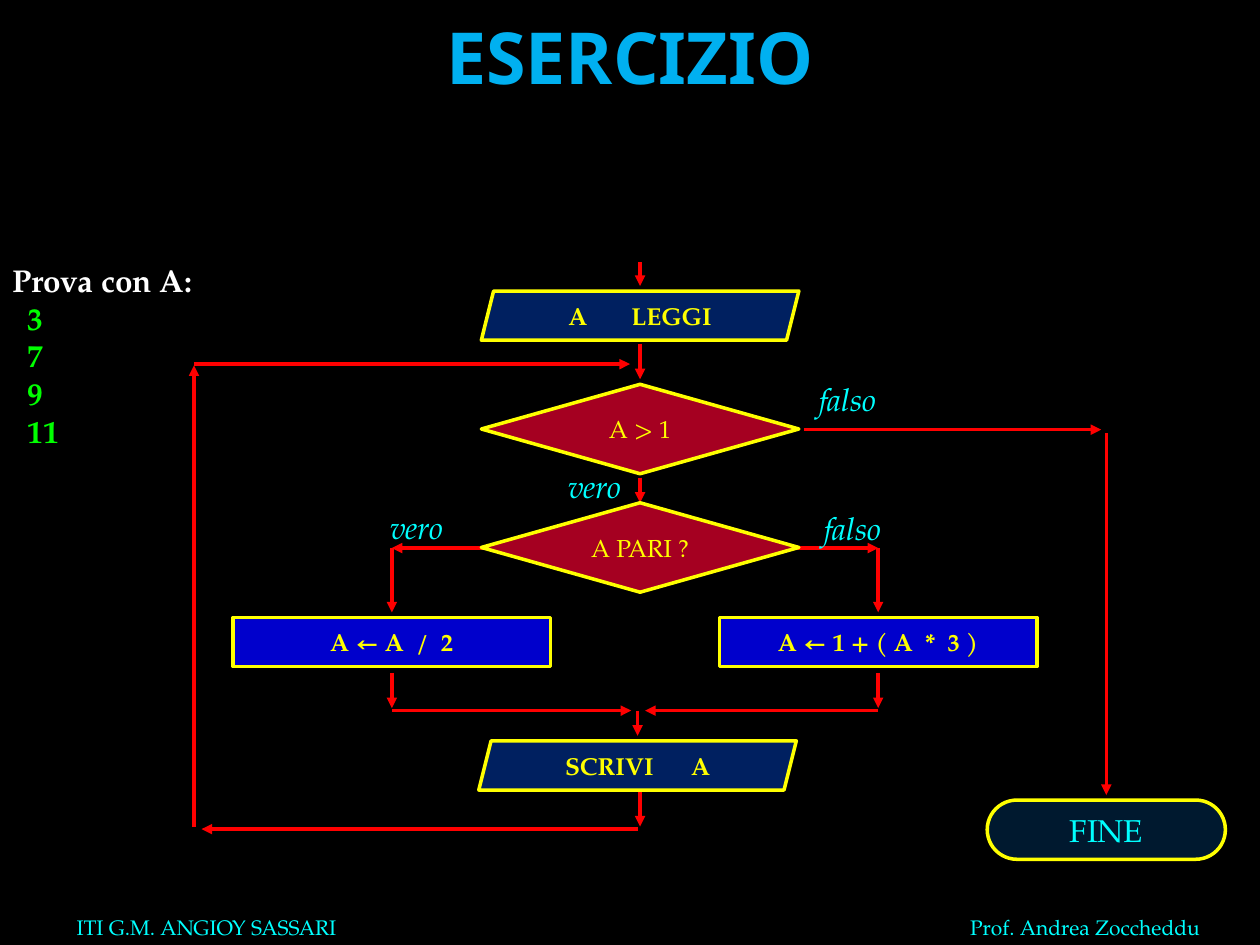
from lxml import etree
from pptx import Presentation
from pptx.dml.color import RGBColor
from pptx.enum.shapes import MSO_CONNECTOR, MSO_SHAPE
from pptx.enum.text import MSO_ANCHOR, PP_ALIGN
from pptx.oxml.ns import qn
from pptx.util import Inches, Pt

LEFT, CENTER = PP_ALIGN.LEFT, PP_ALIGN.CENTER
TOP, MIDDLE = MSO_ANCHOR.TOP, MSO_ANCHOR.MIDDLE
STRAIGHT = MSO_CONNECTOR.STRAIGHT
DATA, TEST = MSO_SHAPE.PARALLELOGRAM, MSO_SHAPE.DIAMOND
STEP, END = MSO_SHAPE.FLOWCHART_PROCESS, MSO_SHAPE.ROUNDED_RECTANGLE

THEME = dict(
    title_font="Noto Sans", font="TeX Gyre Pagella",
    bg="000000", title="00B0F0", cyan="00FFFF", yellow="FFFF00",
    arrow="FF0000", white="FFFFFF", green="00FF00",
    title_size=41, big=18, block=14, small=12, line=2)

# Size, fill, text colour, text size and weight of each kind of block
KINDS = {
    DATA: (2.52, 0.39, "002060", "yellow", "block", True),
    TEST: (2.52, 0.71, "A50021", "yellow", "block", False),
    STEP: (2.52, 0.39, "0000CC", "yellow", "block", True),
    END: (1.89, 0.47, "00192F", "cyan", "big", False),
}

# Vertical axes of the flow chart
LOOP, YES, MAIN, NO, EXIT = 1.54, 3.11, 5.08, 6.97, 8.78
WRITE = MAIN - 0.02
SPLIT, JOIN, BACK, ENTRY, OUT = 4.35, 5.64, 6.58, 2.89, 3.41

# Kind, axis, top, text
BLOCKS = [
    (DATA, MAIN, 2.31, "A \tLEGGI"),
    (TEST, MAIN, 3.05, "A > 1"),
    (TEST, MAIN, 3.99, "A PARI ?"),
    (STEP, YES, 4.9, "A ← A  /  2"),
    (STEP, NO, 4.9, "A ← 1 + ( A  *  3 )"),
    (DATA, WRITE, 5.88, "SCRIVI \tA"),
    (END, EXIT, 6.35, "FINE"),
]

# Axis, start, end
DOWN_ARROWS = [
    (MAIN, 2.08, 2.27), (MAIN, 2.73, 3.01), (MAIN, 3.79, 3.99),
    (YES, SPLIT, 4.86), (NO, SPLIT, 4.86),
    (YES, 5.34, 5.62), (NO, 5.34, 5.62),
    (WRITE, JOIN, 5.84), (MAIN, 6.28, 6.56),
    (EXIT, 3.44, 6.31), (LOOP, 6.56, 2.9),
]
# Height, start, end
SIDE_ARROWS = [
    (SPLIT, MAIN, YES), (SPLIT, MAIN, NO),
    (JOIN, YES, 5.01), (JOIN, NO, 5.12),
    (BACK, WRITE, 1.6), (ENTRY, LOOP, 5), (OUT, 6.38, 8.74),
]

LABELS = [("falso", 6.38, 2.97), ("vero", 4.37, 3.66),
          ("vero", 2.96, 3.98), ("falso", 6.42, 3.99)]
FOOTERS = [("ITI G.M. ANGIOY SASSARI", 0.51, 3.17, 0.4),
           ("Prof. Andrea Zoccheddu", 7.6, 2.05, 0.3)]
TRIALS = ["3", "7", "9", "11"]


def rgb(value):
    return RGBColor.from_string(THEME.get(value, value))


def style(p, color, size, bold=False, italic=False, align=LEFT, font="font"):
    p.alignment = align
    f = p.font
    f.name, f.size, f.bold, f.italic = THEME[font], Pt(THEME[size]), bold, italic
    f.color.rgb = rgb(color)


def center_tight(tf):
    tf.margin_left = tf.margin_right = tf.margin_top = tf.margin_bottom = 0
    tf.vertical_anchor, tf.word_wrap = MIDDLE, False


def textbox(s, text, x, y, w, h):
    tf = s.shapes.add_textbox(Inches(x), Inches(y), Inches(w), Inches(h)).text_frame
    tf.word_wrap, tf.vertical_anchor = True, TOP
    tf.text = text
    return tf


def arrow(s, x1, y1, x2, y2):
    c = s.shapes.add_connector(STRAIGHT, Inches(x1), Inches(y1), Inches(x2), Inches(y2))
    c.line.color.rgb, c.line.width = rgb("arrow"), Pt(THEME["line"])
    etree.SubElement(c.line._get_or_add_ln(), qn("a:tailEnd"), type="triangle")
    etree.SubElement(c._element.spPr, qn("a:effectLst"))


def block(s, kind, axis, top, text):
    w, h, fill, color, size, bold = KINDS[kind]
    sp = s.shapes.add_shape(kind, Inches(axis - w / 2), Inches(top), Inches(w), Inches(h))
    sp.shadow.inherit = False
    if kind == END:
        sp.adjustments[0] = 0.5
    sp.fill.solid()
    sp.fill.fore_color.rgb = rgb(fill)
    sp.line.color.rgb, sp.line.width = rgb("yellow"), Pt(THEME["line"])
    center_tight(sp.text_frame)
    p = sp.text_frame.paragraphs[0]
    p.text = text
    style(p, color, size, bold, align=CENTER)


def main():
    prs = Presentation()
    prs.slide_width, prs.slide_height = Inches(10), Inches(7.5)
    s = prs.slides.add_slide(prs.slide_layouts[6])
    s.background.fill.solid()
    s.background.fill.fore_color.rgb = rgb("bg")

    # Title and footers
    tf = textbox(s, "ESERCIZIO", 0.5, 0.05, 9, 1.25)
    style(tf.paragraphs[0], "title", "title_size", True, align=CENTER, font="title_font")
    for text, x, w, h in FOOTERS:
        tf = textbox(s, text, x, 7.21, w, h)
        tf.word_wrap = False
        style(tf.paragraphs[0], "cyan", "small")

    # Flow chart: arrows lie behind the blocks
    for x, y1, y2 in DOWN_ARROWS:
        arrow(s, x, y1, x, y2)
    for y, x1, x2 in SIDE_ARROWS:
        arrow(s, x1, y, x2, y)
    for item in BLOCKS:
        block(s, *item)
    for text, x, y in LABELS:
        tf = textbox(s, text, x, y, 0.7, 0.4)
        center_tight(tf)
        style(tf.paragraphs[0], "cyan", "big", italic=True, align=CENTER)

    # Trial values
    tf = textbox(s, "Prova con A:", 0, 2.02, 1.77, 1.62)
    style(tf.paragraphs[0], "white", "big", True)
    for value in TRIALS:
        p = tf.add_paragraph()
        p.text = value
        p._p.get_or_add_pPr().set("marL", str(Inches(0.12)))
        style(p, "green", "big", True)

    prs.save("out.pptx")


if __name__ == "__main__":
    main()
